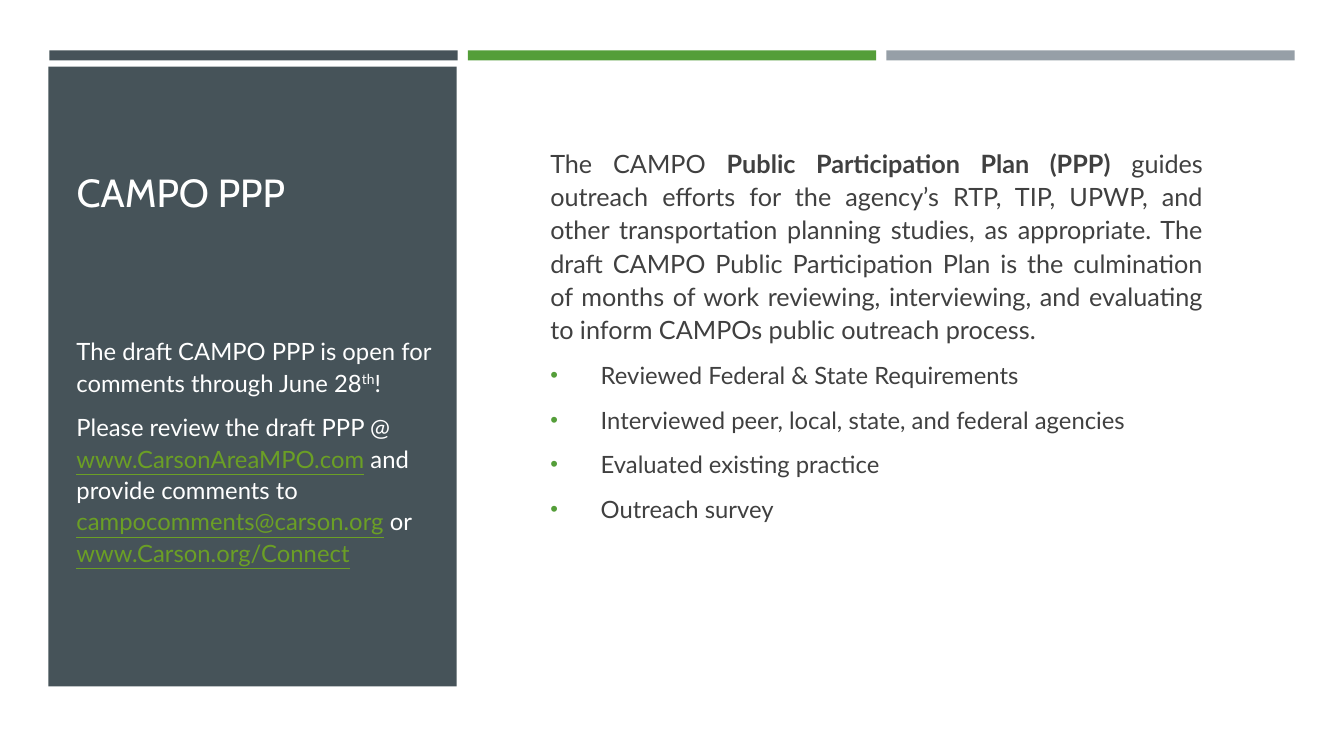
from lxml.etree import SubElement
from pptx import Presentation
from pptx.dml.color import RGBColor
from pptx.enum.shapes import MSO_SHAPE
from pptx.enum.text import MSO_ANCHOR, MSO_AUTO_SIZE, PP_ALIGN
from pptx.oxml.ns import qn
from pptx.util import Inches, Pt

WHITE, SLATE, GREEN, GRAY = "FFFFFF", "465359", "549E39", "969FA7"
INK, LINK = "404040", "6B9F25"

TITLE = "CAMPO PPP"
PLAIN = {}
BOLD = {"bold": True}
RAISED = {"raised": True}
LINKED = {"color": LINK, "underline": True}

INVITATION = [
    [("The draft CAMPO PPP is open for comments through June 28", PLAIN),
     ("th", RAISED), ("!", PLAIN)],
    [("Please review the draft PPP @ ", PLAIN),
     ("www.CarsonAreaMPO.com", LINKED),
     (" and provide comments to ", PLAIN),
     ("campocomments@carson.org", LINKED),
     (" or ", PLAIN),
     ("www.Carson.org/Connect", LINKED)],
]
SUMMARY = [
    ("The CAMPO ", PLAIN),
    ("Public Participation Plan (PPP)", BOLD),
    (" guides outreach efforts for the agency’s RTP, TIP, UPWP, and other "
     "transportation planning studies, as appropriate. The draft CAMPO Public "
     "Participation Plan is the culmination of months of work reviewing, "
     "interviewing, and evaluating to inform CAMPOs public outreach process.", PLAIN),
]
STEPS = [
    "Reviewed Federal & State Requirements",
    "Interviewed peer, local, state, and federal agencies",
    "Evaluated existing practice",
    "Outreach survey",
]

BAR_COLORS = [SLATE, GREEN, GRAY]
BAR_LEFT, BAR_TOP, BAR_WIDTH, BAR_HEIGHT, BAR_STEP = 0.49, 0.5, 4.05, 0.1, 4.15
PANEL = (0.48, 0.66, 4.05, 6.15)
TITLE_AREA = (0.66, 0.77, 3.73, 1.42)
INVITATION_AREA = (0.66, 2.38, 3.73, 4.18)
SUMMARY_AREA = (5.36, 1.39, 6.67, 3.9)
BULLET_INDENT = 0.5


def rgb(value):
    return RGBColor.from_string(value)


def add_span(para, text, size=17, color=WHITE, font="Lato", bold=False,
             underline=False, raised=False):
    span = para.add_run()
    span.text = text
    span.font.name = font
    span.font.size = Pt(size)
    span.font.color.rgb = rgb(color)
    span.font.bold = bold
    span.font.underline = underline
    if raised:
        span.font._element.set("baseline", "30000")


def add_block(page, left, top, width, height):
    block = page.shapes.add_shape(
        MSO_SHAPE.RECTANGLE, Inches(left), Inches(top), Inches(width), Inches(height))
    block.shadow.inherit = False
    block.fill.solid()
    block.fill.fore_color.rgb = rgb(SLATE)
    block.line.fill.background()
    return block


def add_box(page, area, anchor):
    box = page.shapes.add_textbox(*map(Inches, area))
    box.text_frame.word_wrap = True
    box.text_frame.vertical_anchor = anchor
    return box.text_frame


def add_paragraph(frame, spans, align=PP_ALIGN.LEFT, **style):
    first = frame.paragraphs[0]
    para = frame.add_paragraph() if first.runs else first
    para.alignment = align
    para.line_spacing = 1.1
    para.space_before = Pt(3.4)
    para.space_after = Pt(6)
    for text, changes in spans:
        add_span(para, text, **{**style, **changes})
    return para


def add_bullet(para):
    properties = para._p.get_or_add_pPr()
    properties.set("marL", str(Inches(BULLET_INDENT)))
    properties.set("indent", str(-Inches(BULLET_INDENT)))
    color = SubElement(properties, qn("a:buClr"))
    SubElement(color, qn("a:srgbClr"), val=GREEN)
    SubElement(properties, qn("a:buSzPct"), val="92000")
    SubElement(properties, qn("a:buFont"), typeface="Arial")
    SubElement(properties, qn("a:buChar"), char="•")


def main():
    deck = Presentation()
    deck.slide_width, deck.slide_height = Inches(13.33), Inches(7.5)
    page = deck.slides.add_slide(deck.slide_layouts[5])
    page.background.fill.solid()
    page.background.fill.fore_color.rgb = rgb(WHITE)

    for index, color in enumerate(BAR_COLORS):
        bar = add_block(page, BAR_LEFT + index * BAR_STEP, BAR_TOP, BAR_WIDTH, BAR_HEIGHT)
        bar.fill.fore_color.rgb = rgb(color)
    panel = add_block(page, *PANEL)

    title = page.shapes.title
    title.left, title.top, title.width, title.height = map(Inches, TITLE_AREA)
    panel._element.addnext(title._element)
    title.text_frame.word_wrap = True
    title.text_frame.auto_size = MSO_AUTO_SIZE.NONE
    title.text_frame.vertical_anchor = MSO_ANCHOR.BOTTOM
    heading = title.text_frame.paragraphs[0]
    heading.alignment = PP_ALIGN.LEFT
    add_span(heading, TITLE, size=28, font="Cabin")

    invitation = add_box(page, INVITATION_AREA, MSO_ANCHOR.MIDDLE)
    for spans in INVITATION:
        add_paragraph(invitation, spans)

    summary = add_box(page, SUMMARY_AREA, MSO_ANCHOR.TOP)
    add_paragraph(summary, SUMMARY, align=PP_ALIGN.JUSTIFY, size=18, color=INK)
    for step in STEPS:
        add_bullet(add_paragraph(summary, [(step, PLAIN)], color=INK))

    deck.save("out.pptx")


if __name__ == "__main__":
    main()
